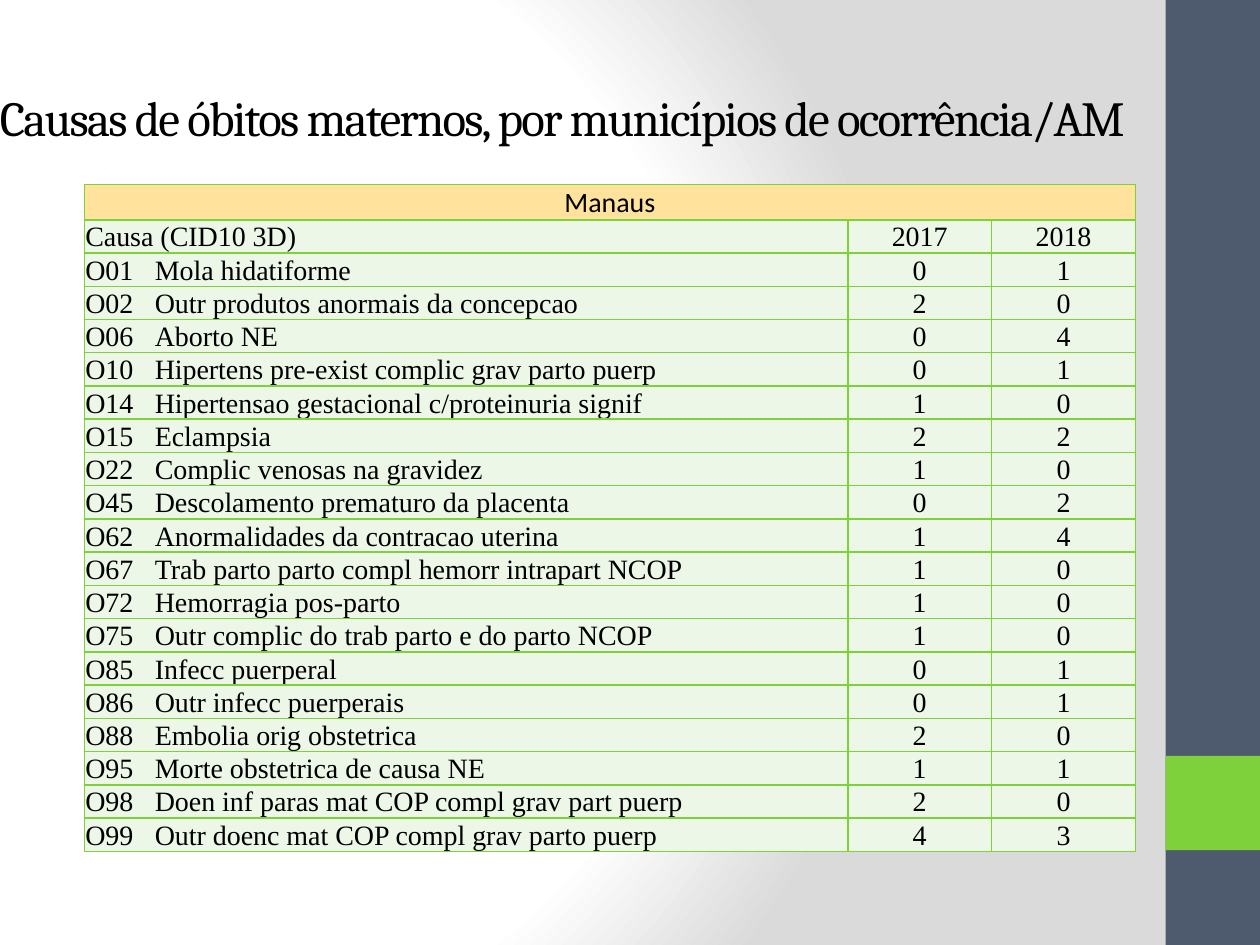
from lxml import etree
from pptx import Presentation
from pptx.dml.color import RGBColor
from pptx.enum.shapes import MSO_SHAPE
from pptx.enum.text import MSO_ANCHOR, PP_ALIGN
from pptx.oxml import parse_xml
from pptx.oxml.ns import qn
from pptx.util import Cm, Pt

RECT = MSO_SHAPE.RECTANGLE
MIDDLE, BOTTOM = MSO_ANCHOR.MIDDLE, MSO_ANCHOR.BOTTOM
LEFT, CENTER, RIGHT = PP_ALIGN.LEFT, PP_ALIGN.CENTER, PP_ALIGN.RIGHT

BLACK = RGBColor(0x00, 0x00, 0x00)
WHITE = RGBColor(0xFF, 0xFF, 0xFF)
GREY = RGBColor(0xDA, 0xDA, 0xDA)
SLATE = RGBColor(0x4E, 0x5B, 0x6F)
GREEN = RGBColor(0x7F, 0xD1, 0x3B)
PALE_GREEN = RGBColor(0xEC, 0xF7, 0xE8)
YELLOW = RGBColor(0xFF, 0xE3, 0x9D)

NS = 'xmlns:a="http://schemas.openxmlformats.org/drawingml/2006/main"'

CAUSES = [
    ("O01", "Mola hidatiforme", 0, 1),
    ("O02", "Outr produtos anormais da concepcao", 2, 0),
    ("O06", "Aborto NE", 0, 4),
    ("O10", "Hipertens pre-exist complic grav parto puerp", 0, 1),
    ("O14", "Hipertensao gestacional c/proteinuria signif", 1, 0),
    ("O15", "Eclampsia", 2, 2),
    ("O22", "Complic venosas na gravidez", 1, 0),
    ("O45", "Descolamento prematuro da placenta", 0, 2),
    ("O62", "Anormalidades da contracao uterina", 1, 4),
    ("O67", "Trab parto parto compl hemorr intrapart NCOP", 1, 0),
    ("O72", "Hemorragia pos-parto", 1, 0),
    ("O75", "Outr complic do trab parto e do parto NCOP", 1, 0),
    ("O85", "Infecc puerperal", 0, 1),
    ("O86", "Outr infecc puerperais", 0, 1),
    ("O88", "Embolia orig obstetrica", 2, 0),
    ("O95", "Morte obstetrica de causa NE", 1, 1),
    ("O98", "Doen inf paras mat COP compl grav part puerp", 2, 0),
    ("O99", "Outr doenc mat COP compl grav parto puerp", 4, 3),
]


class Deck:
    title_font, head_font, body_font = "Cambria", "Calibri", "Times New Roman"
    title_size, table_size = Pt(28), Pt(16)
    code_tab = Cm(1.4)

    def __init__(self, prs):
        self.s = prs.slides.add_slide(prs.slide_layouts[5])

    def background(self, stops):
        self.s.background.fill.gradient()
        grad = self.s.element.find(".//" + qn("a:gradFill"))
        gs = "".join(f'<a:gs pos="{pos * 1000}"><a:srgbClr val="{color}"/></a:gs>'
                     for pos, color in stops)
        grad.getparent().replace(grad, parse_xml(
            f'<a:gradFill {NS} rotWithShape="1"><a:gsLst>{gs}</a:gsLst>'
            '<a:path path="circle"><a:fillToRect l="20000" t="50000" '
            'r="100000" b="50000"/></a:path></a:gradFill>'))

    def rect(self, x, y, w, h, color):
        sp = self.s.shapes.add_shape(RECT, Cm(x), Cm(y), Cm(w), Cm(h))
        sp.shadow.inherit = False
        sp.fill.solid()
        sp.fill.fore_color.rgb = color
        sp.line.fill.background()

    def font(self, p, name, size, align):
        p.alignment = align
        p.font.name, p.font.size = name, size
        p.font.color.rgb = BLACK

    def title(self, x, y, w, h, text):
        sp = self.s.shapes.title
        sp.left, sp.top, sp.width, sp.height = Cm(x), Cm(y), Cm(w), Cm(h)
        tf = sp.text_frame
        tf.text, tf.word_wrap, tf.vertical_anchor = text, True, MIDDLE
        p = tf.paragraphs[0]
        self.font(p, self.title_font, self.title_size, RIGHT)
        p.runs[0].font._element.set("spc", "-100")

    def borders(self, cell):
        tcPr = cell._tc.get_or_add_tcPr()
        for i, side in enumerate(("lnL", "lnR", "lnT", "lnB")):
            ln = etree.Element(qn(f"a:{side}"), w=str(Pt(1)))
            fill = etree.SubElement(ln, qn("a:solidFill"))
            etree.SubElement(fill, qn("a:srgbClr"), val=str(GREEN))
            tcPr.insert(i, ln)

    def cell(self, cell, text, font, align, fill):
        cell.text = text
        cell.vertical_anchor = BOTTOM
        cell.margin_left = cell.margin_right = cell.margin_top = Cm(0.02)
        cell.margin_bottom = 0
        cell.fill.solid()
        cell.fill.fore_color.rgb = fill
        self.borders(cell)
        p = cell.text_frame.paragraphs[0]
        if "\t" in text:
            tabs = etree.SubElement(p._p.get_or_add_pPr(), qn("a:tabLst"))
            etree.SubElement(tabs, qn("a:tab"), pos=str(self.code_tab), algn="l")
        self.font(p, font, self.table_size, align)

    def table(self, x, y, widths, row_h, heading, rows):
        n = len(rows) + 1
        tbl = self.s.shapes.add_table(n, len(widths), Cm(x), Cm(y),
                                      Cm(sum(widths)), Cm(row_h * n)).table
        for col, w in zip(tbl.columns, widths):
            col.width = Cm(w)
        # Heading across all columns
        tbl.cell(0, 0).merge(tbl.cell(0, len(widths) - 1))
        for c in range(len(widths)):
            self.cell(tbl.cell(0, c), "" if c else heading,
                      self.head_font, CENTER, YELLOW)
        # Column names and values
        for r, row in enumerate(rows, 1):
            for c, value in enumerate(row):
                self.cell(tbl.cell(r, c), str(value), self.body_font,
                          CENTER if c else LEFT, PALE_GREEN)


def main():
    prs = Presentation()
    prs.slide_width, prs.slide_height = Cm(25.4), Cm(19.05)
    deck = Deck(prs)

    # Background and side band
    deck.background([(0, WHITE), (75, WHITE), (100, GREY)])
    deck.rect(23.5, 0, 1.9, 19.05, SLATE)
    deck.rect(23.5, 15.24, 1.9, 1.9, GREEN)

    # Title
    deck.title(-0.89, 0.76, 23.82, 3.18,
               "Causas de óbitos maternos, por municípios de ocorrência/AM")

    # Deaths by cause and year
    rows = [("Causa (CID10 3D)", 2017, 2018)]
    rows += [(f"{code}\t{cause}", *counts) for code, cause, *counts in CAUSES]
    deck.table(1.7, 3.72, (15.39, 2.9, 2.9), 0.67, "Manaus", rows)

    prs.save("out.pptx")


if __name__ == "__main__":
    main()
